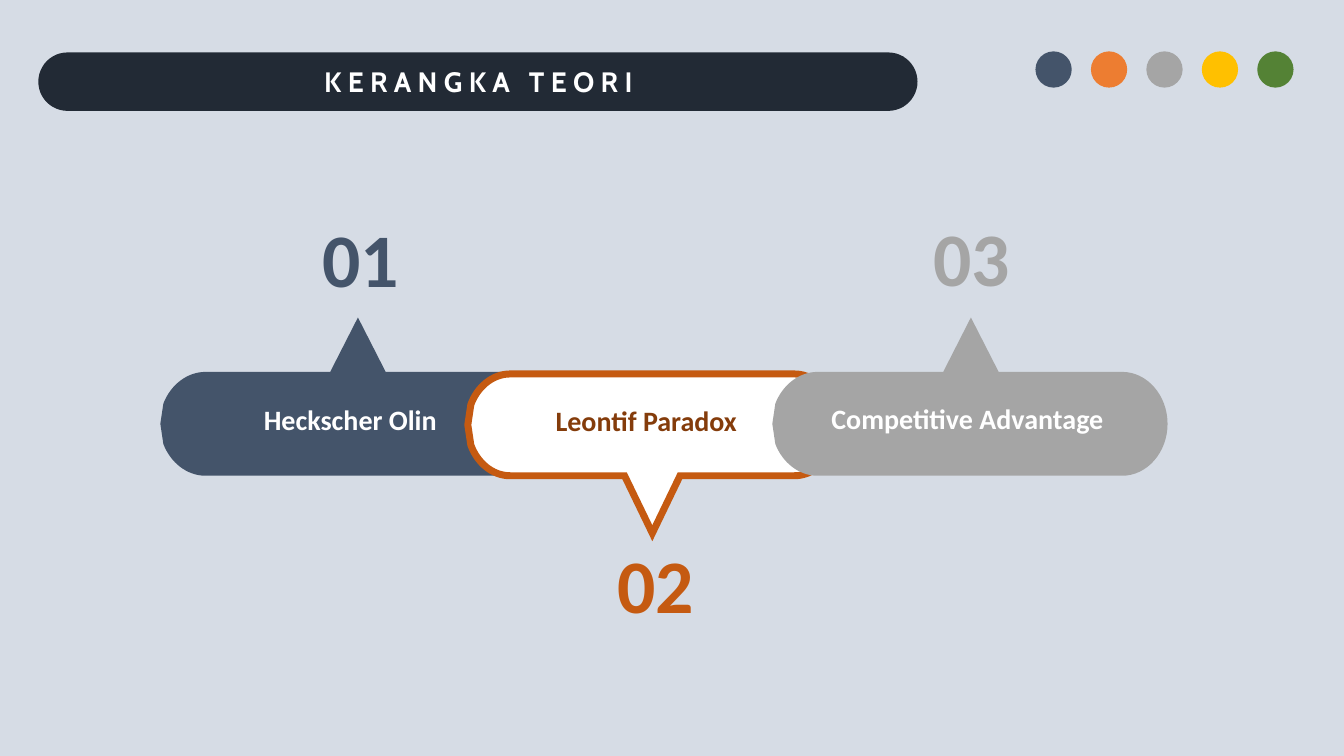
from dataclasses import dataclass

from lxml.etree import SubElement
from pptx import Presentation
from pptx.dml.color import RGBColor
from pptx.enum.shapes import MSO_SHAPE as Preset
from pptx.enum.text import MSO_ANCHOR as Anchor, MSO_AUTO_SIZE as AutoSize, PP_ALIGN as Align
from pptx.oxml import parse_xml
from pptx.oxml.ns import nsdecls, qn
from pptx.shapes.autoshape import Shape
from pptx.slide import Slide
from pptx.text.text import TextFrame
from pptx.util import Inches, Pt

Point = tuple[float, float]

COLORS = {
    "background": "D6DCE5", "navy": "222A35", "slate": "44546A", "orange": "ED7D31",
    "gray": "A5A5A5", "gold": "FFC000", "green": "548235", "rust": "C55A11",
    "brown": "843C0B", "white": "FFFFFF",
}
DOTS = ["slate", "orange", "gray", "gold", "green"]
DOT_LEFT, DOT_TOP, DOT_SIZE, DOT_STEP = 10.27, 0.51, 0.36, 0.55
HALF_POINTER = 0.275
NOTCH_WIDTH, NOTCH_HALF = 0.03, 0.2
ROUND = 0.55  # control length of a quarter ellipse


@dataclass
class Step:
    number: str
    label: str
    left: float
    top: float
    width: float
    height: float
    cap: float  # horizontal radius of the rounded ends
    tip: Point
    label_box: tuple[float, float, float]  # left, top, width
    number_at: Point
    fill: str
    accent: str
    label_color: str = "white"
    outlined: bool = False


@dataclass
class Segment:
    end: Point
    controls: tuple[Point, ...] = ()  # two for a curve, none for a line


STEPS = [
    Step("01", "Heckscher Olin", 1.59, 3.69, 3.92, 1.03, 0.45, (3.55, 3.15),
         (2.41, 3.94, 2.13), (3.02, 2.05), "slate", "slate"),
    Step("02", "Leontif Paradox", 4.64, 3.71, 3.66, 1.01, 0.42, (6.47, 5.29),
         (5.31, 3.95, 2.2), (5.95, 5.29), "white", "rust", "brown", True),
    Step("03", "Competitive Advantage", 7.66, 3.69, 3.92, 1.03, 0.45, (9.63, 3.15),
         (8.04, 3.93, 3.11), (9.08, 2.04), "gray", "gray"),
]


def rgb(name: str) -> RGBColor:
    return RGBColor.from_string(COLORS[name])


def paint(shape: Shape, fill: str) -> None:
    shape.shadow.inherit = False
    shape.fill.solid()
    shape.fill.fore_color.rgb = rgb(fill)
    shape.line.fill.background()


def write(frame: TextFrame, text: str, size: int, color: str, font: str = "Calibri") -> None:
    frame.word_wrap = True
    para = frame.paragraphs[0]
    para.text = text
    para.alignment = Align.CENTER
    para.font.name, para.font.size, para.font.bold = font, Pt(size), True
    para.font.color.rgb = rgb(color)


def add_text(slide: Slide, text: str, left: float, top: float, width: float,
             height: float, size: int, color: str) -> None:
    box = slide.shapes.add_textbox(Inches(left), Inches(top), Inches(width), Inches(height))
    write(box.text_frame, text, size, color)
    box.text_frame.auto_size = AutoSize.SHAPE_TO_FIT_TEXT


def outline(step: Step) -> list[Segment]:
    """Clockwise segments from the upper left corner back to it."""
    left, top, cap = step.left, step.top, step.cap
    right, bottom, half = left + step.width, top + step.height, step.height / 2
    middle = top + half
    tip_x, tip_y = step.tip
    points_up = tip_y < middle
    side = -HALF_POINTER if points_up else HALF_POINTER
    edge = top if points_up else bottom
    pointer = [Segment((tip_x + side, edge)), Segment(step.tip), Segment((tip_x - side, edge))]
    inner, reach = right - cap, ROUND * cap
    right_end = [
        Segment((inner, top)),
        Segment((right, middle), ((inner + reach, top), (right, middle - ROUND * half))),
        Segment((inner, bottom), ((right, middle + ROUND * half), (inner + reach, bottom))),
    ]
    shoulder, bend, notch = left + 0.58 * cap, left + 0.22 * cap, left + NOTCH_WIDTH
    left_end = [
        Segment((left + cap, bottom)),
        Segment((notch, middle + NOTCH_HALF), ((shoulder, bottom), (bend, middle + 0.74 * half))),
        Segment((left, middle)),
        Segment((notch, middle - NOTCH_HALF)),
        Segment((left + cap, top), ((bend, middle - 0.74 * half), (shoulder, top))),
    ]
    if points_up:
        return pointer + right_end + left_end
    return right_end + pointer + left_end


def add_band(slide: Slide, step: Step) -> None:
    segments = outline(step)
    ends = [(Inches(x), Inches(y)) for x, y in (segment.end for segment in segments)]
    builder = slide.shapes.build_freeform(*ends[-1])
    builder.add_line_segments(ends, close=True)
    band = builder.convert_to_shape()
    # Bend the rounded ends into curves
    lines = list(band._element.iter(qn("a:lnTo")))
    for line, segment in zip(lines, segments):
        if segment.controls:
            line.tag = qn("a:cubicBezTo")
            for index, (x, y) in enumerate(segment.controls):
                control = line.makeelement(qn("a:pt"), {"x": str(Inches(x) - band.left),
                                                        "y": str(Inches(y) - band.top)})
                line.insert(index, control)
    paint(band, step.fill)
    if step.outlined:
        band.line.color.rgb = rgb(step.accent)
        band.line.width = Pt(5)
        # Sharp corners on the pointer
        SubElement(band.line._get_or_add_ln(), qn("a:miter"), lim="800000")


def add_title(slide: Slide) -> None:
    pill = slide.shapes.add_shape(Preset.ROUNDED_RECTANGLE, Inches(0.38), Inches(0.52),
                                  Inches(8.72), Inches(0.58))
    pill.adjustments[0] = 0.5
    paint(pill, "navy")
    title = slide.shapes.title
    title.left, title.top = Inches(0.53), Inches(0.56)
    title.width, title.height = Inches(8.43), Inches(0.5)
    # Rounded outline for the title itself
    title._element.spPr.append(parse_xml(
        f'<a:prstGeom {nsdecls("a")} prst="roundRect"><a:avLst>'
        '<a:gd name="adj" fmla="val 50000"/></a:avLst></a:prstGeom>'))
    paint(title, "navy")
    write(title.text_frame, "K E R A N G K A   T E O R I", 20, "white", "Cabin")
    title.text_frame.vertical_anchor = Anchor.MIDDLE
    title.text_frame.auto_size = AutoSize.NONE
    # Bring the title in front of its pill
    pill._element.addnext(title._element)


def main() -> None:
    deck = Presentation()
    deck.slide_width, deck.slide_height = Inches(13.33), Inches(7.5)
    slide = deck.slides.add_slide(deck.slide_layouts[5])
    slide.background.fill.solid()
    slide.background.fill.fore_color.rgb = rgb("background")

    # Overlapping bands, then their labels and numbers
    for step in STEPS:
        add_band(slide, step)
    for step in STEPS:
        add_text(slide, step.label, *step.label_box, 0.44, 20, step.label_color)
    for step in STEPS:
        add_text(slide, step.number, *step.number_at, 1.11, 1.01, 54, step.accent)

    # Row of coloured dots
    for index, color in enumerate(DOTS):
        dot = slide.shapes.add_shape(Preset.OVAL, Inches(DOT_LEFT + index * DOT_STEP),
                                     Inches(DOT_TOP), Inches(DOT_SIZE), Inches(DOT_SIZE))
        paint(dot, color)

    add_title(slide)
    deck.save("out.pptx")


if __name__ == "__main__":
    main()
